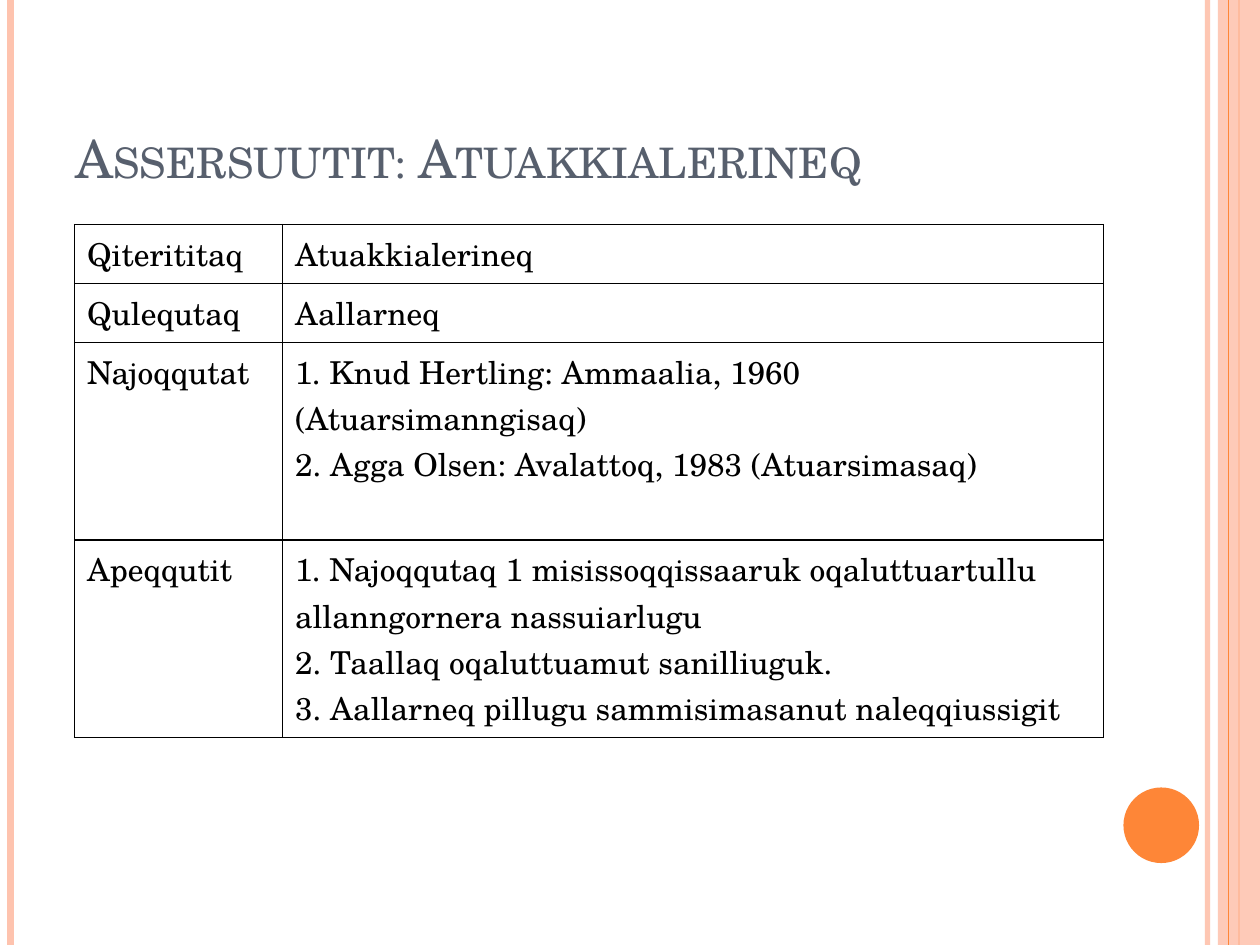
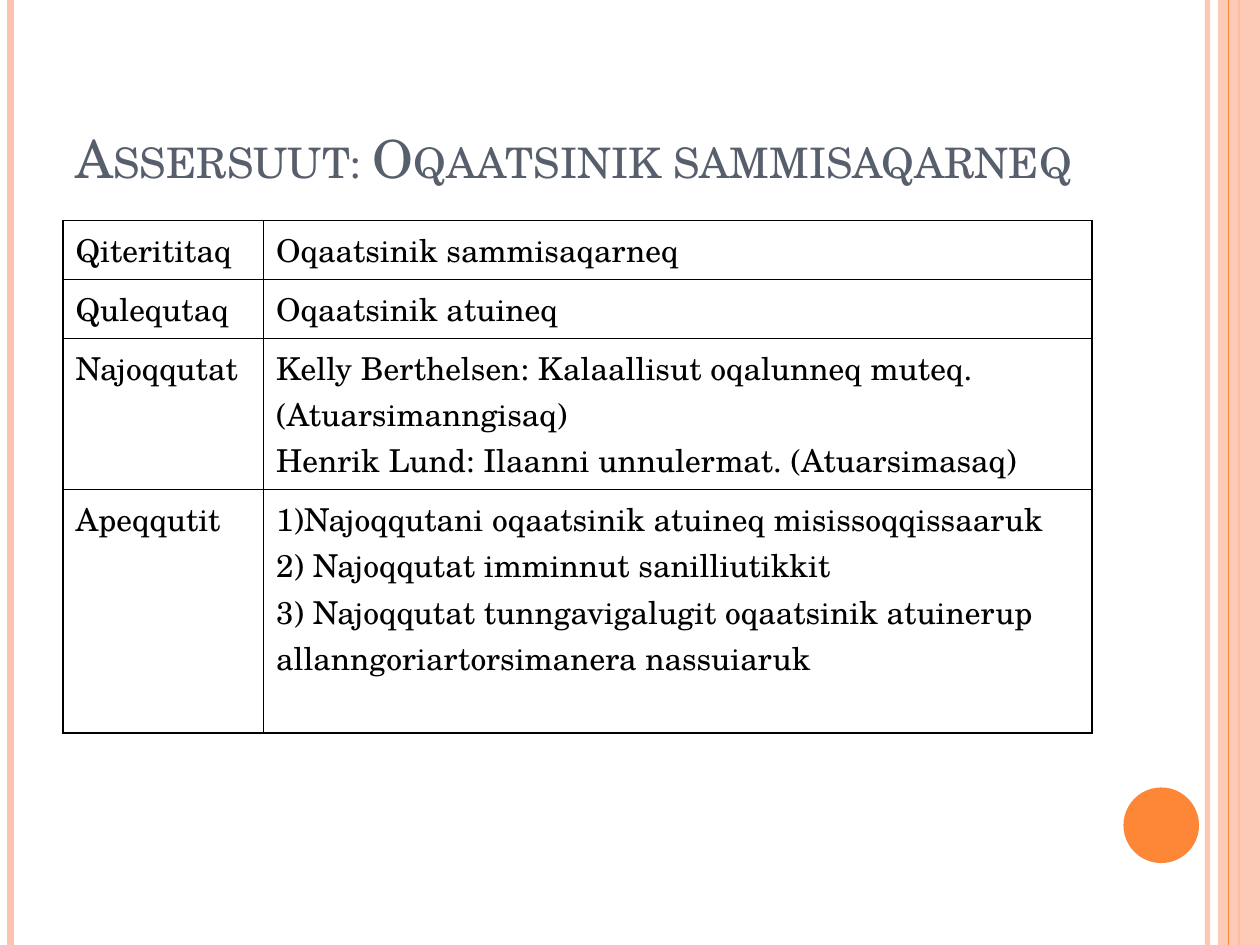
from lxml.etree import SubElement
from pptx import Presentation
from pptx.dml.color import RGBColor
from pptx.enum.shapes import MSO_CONNECTOR, MSO_SHAPE
from pptx.enum.text import MSO_ANCHOR, MSO_AUTO_SIZE, PP_ALIGN
from pptx.oxml.ns import qn
from pptx.util import Emu, Inches, Pt

UNIT = Inches(10) // 120
PAGE_COLUMNS, PAGE_ROWS = 120, 90
FONT = "TeX Gyre Schola"
PEACH, ORANGE, SLATE, BLACK = "FEC3AE", "FE8637", "575F6D", "000000"
TITLE_BOX = (6, 3.6, 98, 15)
BAND_BOX = (116, 0, 4, PAGE_ROWS)
DISC_BOX = (107, 75, 7.2, 7.2)
TABLE_WIDTH = 98
LINE_HEIGHT = Pt(26.4)
CELL_PADDING = Inches(0.1)
ROW_LABELS = ("Qiterititaq", "Qulequtaq", "Najoqqutat", "Apeqqutit")

LITERATURE = {
    "title": "Assersuutit: Atuakkialerineq",
    "corner": (7.1, 21.4),
    "label_width": 19.8,
    "row_lines": (1, 1, 4, 4),
    "entries": (
        ["Atuakkialerineq"],
        ["Aallarneq"],
        ["1. Knud Hertling: Ammaalia, 1960 (Atuarsimanngisaq)",
         "2. Agga Olsen: Avalattoq, 1983 (Atuarsimasaq)"],
        ["1. Najoqqutaq 1 misissoqqissaaruk oqaluttuartullu allanngornera nassuiarlugu",
         "2. Taallaq oqaluttuamut sanilliuguk.",
         "3. Aallarneq pillugu sammisimasanut naleqqiussigit"],
    ),
}
LANGUAGE = {
    "title": "Assersuut: Oqaatsinik sammisaqarneq",
    "corner": (6, 21),
    "label_width": 19.1,
    "row_lines": (1, 1, 3, 5),
    "entries": (
        ["Oqaatsinik sammisaqarneq"],
        ["Oqaatsinik atuineq"],
        ["Kelly Berthelsen: Kalaallisut oqalunneq muteq. (Atuarsimanngisaq)",
         "Henrik Lund: Ilaanni unnulermat. (Atuarsimasaq)"],
        ["1)Najoqqutani oqaatsinik atuineq misissoqqissaaruk",
         "2) Najoqqutat imminnut sanilliutikkit",
         "3) Najoqqutat tunngavigalugit oqaatsinik atuinerup allanngoriartorsimanera nassuiaruk"],
    ),
}


def color(hex_code):
    """Turn a hex string into a colour."""
    return RGBColor.from_string(hex_code)


def grid(*steps):
    """Turn grid steps into lengths."""
    return [Emu(round(step * UNIT)) for step in steps]


def set_opacity(shape, percent):
    """Make the colours of a shape partly transparent."""
    for paint in shape._element.spPr.iter(qn("a:srgbClr")):
        SubElement(paint, qn("a:alpha"), val=str(percent * 1000))


def style_font(para, size, hex_code):
    """Set the font of a paragraph."""
    para.font.name = FONT
    para.font.size = Pt(size)
    para.font.color.rgb = color(hex_code)


def add_stripe(page, column, hex_code, width, opacity=100):
    """Draw a full-height vertical line at a grid column."""
    ends = grid(column, 0, column, PAGE_ROWS)
    stripe = page.shapes.add_connector(MSO_CONNECTOR.STRAIGHT, *ends)
    stripe.line.color.rgb = color(hex_code)
    stripe.line.width = Pt(width)
    SubElement(stripe._element.spPr, qn("a:effectLst"))
    if opacity < 100:
        set_opacity(stripe, opacity)


def add_plain_shape(page, kind, box, hex_code):
    """Draw a filled shape without outline or shadow."""
    shape = page.shapes.add_shape(kind, *grid(*box))
    shape.shadow.inherit = False
    shape.fill.solid()
    shape.fill.fore_color.rgb = color(hex_code)
    shape.line.fill.background()
    return shape


def add_frame(page):
    """Draw the stripes, band and disc that every slide shares."""
    add_stripe(page, 115, PEACH, 3, 93)
    add_stripe(page, 1, PEACH, 4.5)
    add_stripe(page, 118, ORANGE, 1.5)
    set_opacity(add_plain_shape(page, MSO_SHAPE.RECTANGLE, BAND_BOX, PEACH), 87)
    add_stripe(page, 117, ORANGE, 0.75)
    add_plain_shape(page, MSO_SHAPE.OVAL, DISC_BOX, ORANGE)


def add_title(page, text, box):
    """Fill the title placeholder in small capitals."""
    title = page.shapes.title
    title.left, title.top, title.width, title.height = grid(*box)
    frame = title.text_frame
    frame.text = text
    frame.word_wrap = True
    frame.auto_size = MSO_AUTO_SIZE.NONE
    frame.vertical_anchor = MSO_ANCHOR.BOTTOM
    para = frame.paragraphs[0]
    para.alignment = PP_ALIGN.LEFT
    style_font(para, 30, SLATE)
    para.runs[0]._r.get_or_add_rPr().set("cap", "small")


def add_borders(cell):
    """Rule all four sides of a cell."""
    properties = cell._tc.get_or_add_tcPr()
    for position, side in enumerate(("a:lnL", "a:lnR", "a:lnT", "a:lnB")):
        border = SubElement(properties, qn(side), w=str(Pt(1)))
        SubElement(SubElement(border, qn("a:solidFill")), qn("a:srgbClr"), val=BLACK)
        properties.insert(position, border)


def fill_cell(cell, lines):
    """Write the lines of a cell, one paragraph each."""
    cell.text = "\n".join(lines)
    for para in cell.text_frame.paragraphs:
        style_font(para, 18, BLACK)
    cell.fill.background()
    add_borders(cell)


def add_topic_table(page, topic):
    """Place the table of labels and entries."""
    heights = [lines * LINE_HEIGHT + CELL_PADDING for lines in topic["row_lines"]]
    left, top, width = grid(*topic["corner"], TABLE_WIDTH)
    table = page.shapes.add_table(len(heights), 2, left, top, width, sum(heights)).table
    table.first_row = table.horz_banding = False
    label_width = topic["label_width"]
    widths = grid(label_width, TABLE_WIDTH - label_width)
    for column, column_width in zip(table.columns, widths):
        column.width = column_width
    for row, height, label, entry in zip(table.rows, heights, ROW_LABELS, topic["entries"]):
        row.height = height
        fill_cell(row.cells[0], [label])
        fill_cell(row.cells[1], entry)


def add_topic_slide(deck, topic):
    """Build one slide with a title and its table."""
    page = deck.slides.add_slide(deck.slide_layouts.get_by_name("Title Only"))
    add_frame(page)
    add_title(page, topic["title"], TITLE_BOX)
    add_topic_table(page, topic)


def main():
    """Build and save the deck."""
    deck = Presentation()
    deck.slide_width, deck.slide_height = grid(PAGE_COLUMNS, PAGE_ROWS)
    for topic in (LITERATURE, LANGUAGE):
        add_topic_slide(deck, topic)
    deck.save("out.pptx")


if __name__ == "__main__":
    main()
